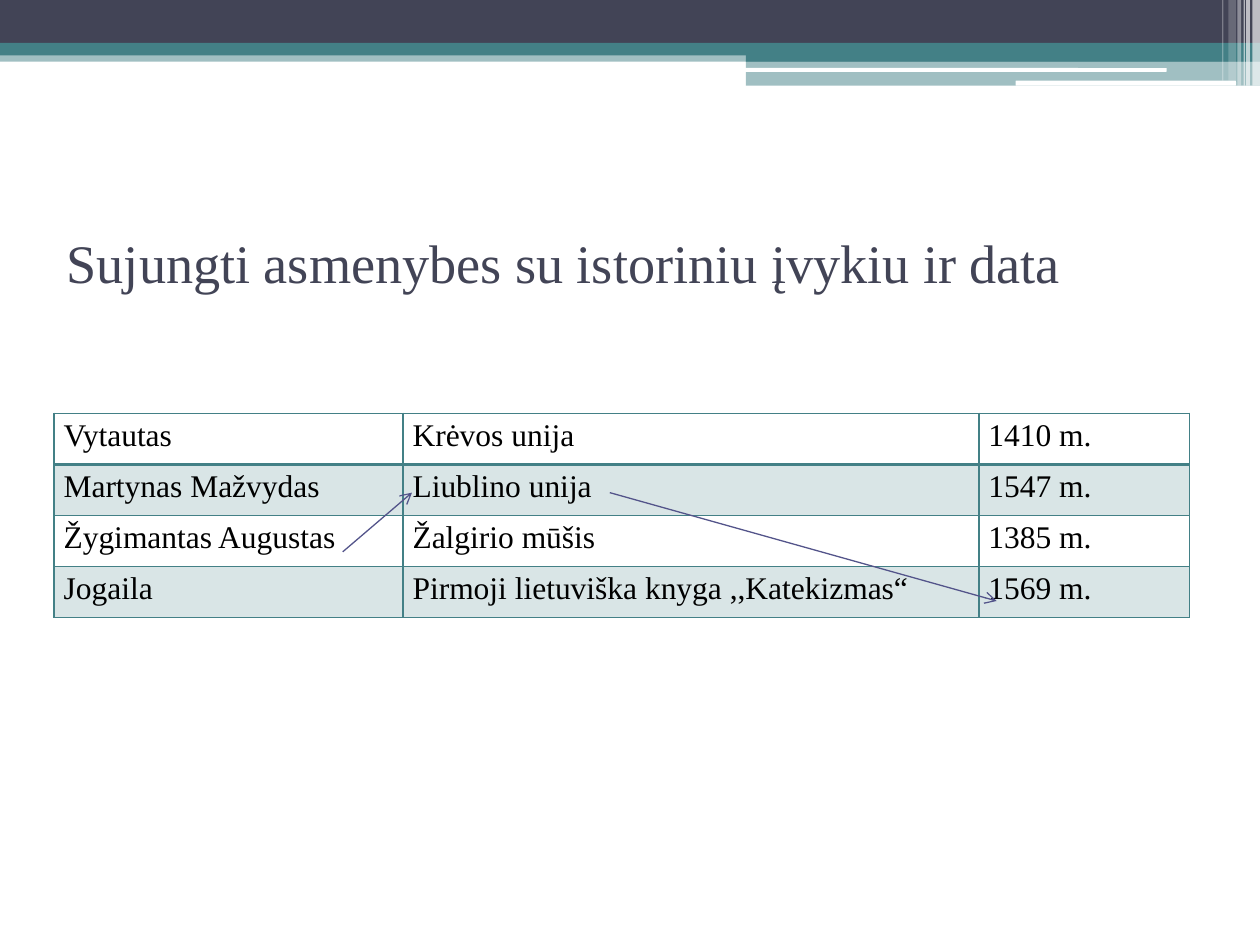
import dataclasses
import typing

import pptx
import pptx.dml.color
import pptx.enum.shapes
import pptx.enum.text
import pptx.oxml
import pptx.oxml.ns
import pptx.util

RGB = pptx.dml.color.RGBColor.from_string
Shape = pptx.enum.shapes.MSO_SHAPE
Text = pptx.enum.text


@dataclasses.dataclass(frozen=True)
class Theme:
    dark: str = "424456"
    teal: str = "438086"
    white: str = "FFFFFF"
    ink: str = "000000"
    arrow: str = "53548A"
    font: str = "Times New Roman"
    head: int = 31
    body: int = 18


class Bar(typing.NamedTuple):
    x: float
    y: float
    w: float
    h: float
    color: str
    alpha: int = 100
    kind: typing.Any = Shape.RECTANGLE


class Arrow(typing.NamedTuple):
    x1: float
    y1: float
    x2: float
    y2: float


THEME = Theme()
WIDE, HIGH = pptx.util.Inches(10), pptx.util.Inches(7.5)

# All lengths are percent shares of the slide's width
ROUND = Shape.ROUNDED_RECTANGLE
BANDS = [
    Bar(0, 4, 100, 0.9, THEME.teal, 50),
    Bar(0, 0, 100, 3.4, THEME.dark),
    Bar(0, 3.4, 100, 1, THEME.teal),
    Bar(59.2, 3.9, 40.8, 1, THEME.teal),
    Bar(59.2, 4.8, 40.8, 2, THEME.teal, 50),
    Bar(59.1, 5.4, 33.5, 0.3, THEME.white, kind=ROUND),
    Bar(80.6, 6.4, 17.5, 0.4, THEME.white, kind=ROUND),
]
# Pale stripes in the corner: left, width, height, opacity
STRIPES = [
    Bar(x, 0, w, h, THEME.white, alpha)
    for x, w, h, alpha in [
        (99.4, 0.6, 6.8, 65), (98.9, 0.3, 6.8, 65), (98.7, 0.1, 6.8, 60),
        (98.2, 0.3, 6.8, 40), (97.5, 0.6, 6.4, 20), (97, 0.1, 6.4, 30),
    ]
]
LEFT, SPAN = 4.3, 90
COLS = [27.7, 45.7, 16.7]
ROWS = [
    ("Vytautas", "Krėvos unija", "1410 m."),
    ("Martynas Mažvydas", "Liublino unija", "1547 m."),
    ("Žygimantas Augustas", "Žalgirio mūšis", "1385 m."),
    ("Jogaila", "Pirmoji lietuviška knyga ,,Katekizmas“", "1569 m."),
]
ARROWS = [Arrow(27.2, 43.8, 32.7, 39.1), Arrow(48.4, 39.1, 79.1, 47.7)]


def share(part: float) -> int:
    return round(WIDE * part / 100)


def assign(item: typing.Any, values: dict) -> None:
    for name, value in values.items():
        setattr(item, name, value)


def style(font: typing.Any, size: int, color: str) -> None:
    assign(font, {"name": THEME.font, "size": pptx.util.Pt(size), "bold": False})
    font.color.rgb = RGB(color)


def paint(fill: typing.Any, props: typing.Any, color: str, alpha: int) -> None:
    fill.solid()
    fill.fore_color.rgb = RGB(color)
    if alpha < 100:
        tone = props.xpath("a:solidFill/a:srgbClr")[0]
        node = pptx.oxml.parse_xml(
            f'<a:alpha {pptx.oxml.ns.nsdecls("a")} val="{alpha * 1000}"/>')
        tone.append(node)


def draw_bar(slide: typing.Any, bar: Bar) -> None:
    box = slide.shapes.add_shape(bar.kind, *map(share, bar[:4]))
    box.shadow.inherit = False
    box.line.fill.background()
    paint(box.fill, box._element.spPr, bar.color, bar.alpha)


def draw_title(slide: typing.Any, words: str) -> None:
    title = slide.shapes.title
    slide.shapes._spTree.append(title._element)
    assign(title, {"left": share(LEFT), "top": share(17),
                   "width": share(SPAN), "height": share(13.2)})
    frame = title.text_frame
    frame.text = words
    assign(frame, {
        "word_wrap": True, "auto_size": Text.MSO_AUTO_SIZE.NONE,
        "vertical_anchor": Text.MSO_ANCHOR.MIDDLE,
        "margin_bottom": share(6.1),
    })
    line = frame.paragraphs[0]
    line.alignment = Text.PP_ALIGN.LEFT
    style(line.runs[0].font, THEME.head, THEME.dark)


def edge(cell: typing.Any, side: str, width: float) -> None:
    cell._tc.get_or_add_tcPr().append(pptx.oxml.parse_xml(
        f'<a:ln{side} {pptx.oxml.ns.nsdecls("a")} w="{pptx.util.Pt(width)}">'
        f'<a:solidFill><a:srgbClr val="{THEME.teal}"/></a:solidFill>'
        f'</a:ln{side}>'))


def draw_cell(cell: typing.Any, words: str, row: int) -> None:
    cell.text = words
    assign(cell, {"margin_left": share(0.75), "margin_right": share(0.75),
                  "margin_top": 0, "margin_bottom": 0})
    line = cell.text_frame.paragraphs[0]
    assign(line, {"alignment": Text.PP_ALIGN.JUSTIFY, "line_spacing": 1.15})
    style(line.runs[0].font, THEME.body, THEME.ink)
    # The rule under the first row is heavier
    heavy = {(0, "B"), (1, "T")}
    for side in "LRTB":
        edge(cell, side, 2 if (row, side) in heavy else 1)
    if row % 2:
        paint(cell.fill, cell._tc.tcPr, THEME.teal, 20)
    else:
        cell.fill.background()


def draw_table(slide: typing.Any) -> None:
    table = slide.shapes.add_table(
        len(ROWS), len(COLS), share(LEFT), share(32.8),
        share(sum(COLS)), share(16.2)).table
    assign(table, {"first_row": False, "horz_banding": False})
    for col, width in zip(table.columns, COLS):
        col.width = share(width)
    for r, row in enumerate(ROWS):
        for c, words in enumerate(row):
            draw_cell(table.cell(r, c), words, r)


def draw_arrow(slide: typing.Any, arrow: Arrow) -> None:
    link = slide.shapes.add_connector(
        pptx.enum.shapes.MSO_CONNECTOR.STRAIGHT, *map(share, arrow))
    link.line.color.rgb = RGB(THEME.arrow)
    link.line.width = pptx.util.Pt(0.75)
    space = pptx.oxml.ns.nsdecls("a")
    link.line._get_or_add_ln().append(
        pptx.oxml.parse_xml(f'<a:tailEnd {space} type="arrow"/>'))
    link._element.spPr.append(pptx.oxml.parse_xml(f"<a:effectLst {space}/>"))


def main() -> None:
    deck = pptx.Presentation()
    assign(deck, {"slide_width": WIDE, "slide_height": HIGH})
    slide = deck.slides.add_slide(deck.slide_layouts.get_by_name("Title Only"))
    # Header band
    for bar in BANDS + STRIPES:
        draw_bar(slide, bar)
    # Title, table and matching arrows
    draw_title(slide, "Sujungti asmenybes su istoriniu įvykiu ir data")
    draw_table(slide)
    for arrow in ARROWS:
        draw_arrow(slide, arrow)
    deck.save("out.pptx")


if __name__ == "__main__":
    main()
